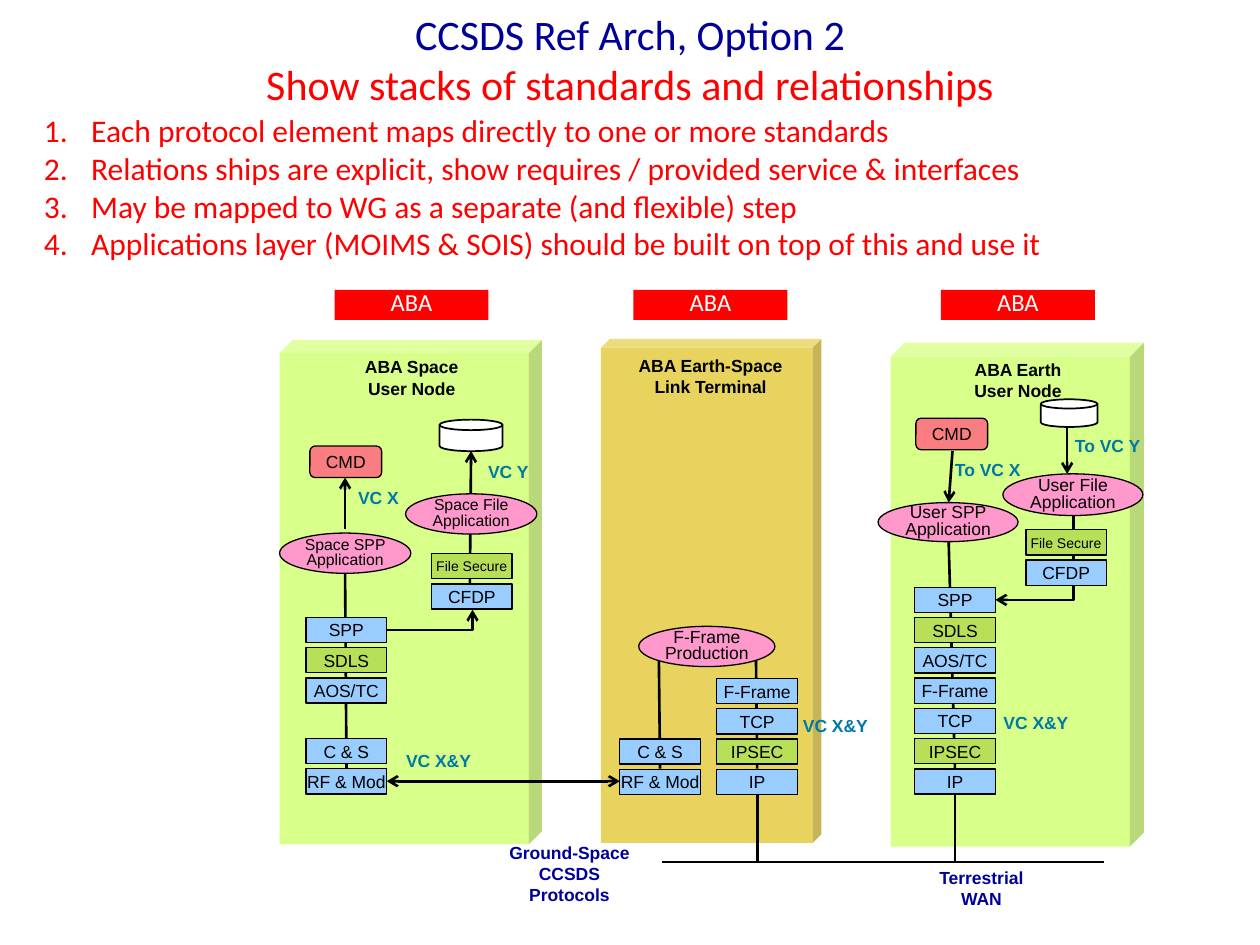
import lxml.etree
import pptx
import pptx.dml.color
import pptx.enum.shapes
import pptx.enum.text
import pptx.oxml.ns
import pptx.util

Pt = pptx.util.Pt
KIND = pptx.enum.shapes.MSO_SHAPE
LINK = pptx.enum.shapes.MSO_CONNECTOR
ALIGN = pptx.enum.text.PP_ALIGN
ANCHOR = pptx.enum.text.MSO_ANCHOR
SIZE = (46, 14.4)
STEP = 17.3
GREEN = ("SDLS", "IPSEC", "File Secure")
TIGHT = {"margin_left": 0, "margin_right": 0, "margin_top": 0, "margin_bottom": 0}
PLAIN = {"name": "Arial", "size": Pt(10)}
BOLD = {**PLAIN, "bold": True}
CENTER = {"alignment": ALIGN.CENTER}
DENSE = {**CENTER, "line_spacing": 0.8}


def tint(code):
    """Turn a hex string into a colour."""
    return pptx.dml.color.RGBColor.from_string(code)


def apply(item, form):
    """Set each attribute in the format on the item."""
    for key, value in form.items():
        setattr(item, key, value)


def add(node, tag, **attrs):
    """Append a drawing element to an XML node."""
    return lxml.etree.SubElement(node, pptx.oxml.ns.qn(tag), attrs)


def write(shape, text, font, color, para=CENTER, frame=TIGHT):
    """Fill a shape with formatted text."""
    body = shape.text_frame
    body.text = text
    apply(body, {"vertical_anchor": ANCHOR.MIDDLE, "word_wrap": True, **frame})
    for line in body.paragraphs:
        apply(line, para)
        for run in line.runs:
            apply(run.font, font)
            run.font.color.rgb = tint(color)
    return body


def place(slide, box, kind, x, y, w, h, fill, edge=0.75):
    """Add a filled shape relative to the box."""
    shape = slide.shapes.add_shape(kind, Pt(box[0] + x), Pt(box[1] + y), Pt(w), Pt(h))
    shape.shadow.inherit = False
    shape.fill.solid()
    shape.fill.fore_color.rgb = tint(fill)
    if edge:
        shape.line.color.rgb = tint("000000")
        shape.line.width = Pt(edge)
    else:
        shape.line.fill.background()
    return shape


def note(slide, box, x, y, w, h, text, font, color, para=CENTER, frame={}):
    """Add a text box relative to the box."""
    shape = slide.shapes.add_textbox(Pt(box[0] + x), Pt(box[1] + y), Pt(w), Pt(h))
    return write(shape, text, font, color, para, frame)


def wire(slide, box, x1, y1, x2, y2, ends=(), bent=False):
    """Join two points, straight or down and then left."""
    if bent:
        mid, half = ((x1 + x2) / 2, (y1 + y2) / 2), ((y2 - y1) / 2, (x1 - x2) / 2)
        x1, y1 = mid[0] - half[0], mid[1] - half[1]
        x2, y2 = mid[0] + half[0], mid[1] + half[1]
    dx, dy = box
    line = slide.shapes.add_connector(
        LINK.STRAIGHT, Pt(dx + x1), Pt(dy + y1), Pt(dx + x2), Pt(dy + y2))
    line.line.color.rgb = tint("000000")
    line.line.width = Pt(1.5)
    props = line._element.spPr
    if bent:
        props.find(pptx.oxml.ns.qn("a:xfrm")).set("rot", "5400000")
        props.find(pptx.oxml.ns.qn("a:prstGeom")).set("prst", "bentConnector2")
    for end in ends:
        add(line.line._get_or_add_ln(), "a:" + end, type="arrow")
    add(props, "a:effectLst")


def stack(slide, box, x, y, names):
    """Pile protocol boxes at an equal step, leaving out empty rows."""
    for row, name in enumerate(names):
        if name:
            fill = "B7E058" if name in GREEN else "99CCFF"
            size = 8 if name == "File Secure" else 10
            shape = place(slide, box, KIND.RECTANGLE, x, y + row * STEP, *SIZE, fill)
            write(shape, name, {**PLAIN, "size": Pt(size)}, "000000")


def oval(slide, box, x, y, w, h, text, size=10):
    """Add an application ellipse."""
    shape = place(slide, box, KIND.OVAL, x, y, w, h, "FF99CC")
    write(shape, text, {**PLAIN, "size": Pt(size)}, "000000", DENSE)


def store(slide, box, x, y, w, h):
    """Add a data store."""
    place(slide, box, KIND.FLOWCHART_MAGNETIC_DISK, x, y, w, h, "FFFFFF", 1)


def order(slide, box, x, y):
    """Add a command box."""
    shape = place(slide, box, KIND.ROUNDED_RECTANGLE, x, y, 41, 18, "FA7D81")
    write(shape, "CMD", PLAIN, "000000")


def label(slide, box, x, y, w, text):
    """Add a virtual channel label."""
    note(slide, box, x, y, w, 19.4, text, BOLD, "0079A4", frame={"word_wrap": False})


def node(slide, box, wide, deep, fill, mid, title):
    """Add a translucent block with its tag and title."""
    cube = place(slide, box, KIND.CUBE, 0, 0, wide, 288, fill, 0)
    cube.adjustments[0] = deep
    color = next(cube._element.iter(pptx.oxml.ns.qn("a:srgbClr")))
    add(color, "a:alpha", val="76000")
    tag = place(slide, box, KIND.RECTANGLE, mid - 44, 165.6 - box[1], 88, 17.3, "FF0000", 0)
    write(tag, "ABA", {"name": "Calibri", "size": Pt(14)}, "FFFFFF", DENSE)
    note(slide, box, mid - 60, 5.5, 120, 31.7, title, BOLD, "000000")


def space(slide, box):
    """Build the space user node."""
    node(slide, box, 149.8, 0.049, "CCFF66", 75.4, "ABA Space\vUser Node")
    wire(slide, box, 37.4, 133, 38.2, 245)
    wire(slide, box, 37.4, 78.5, 37.4, 108, ["headEnd"])
    wire(slide, box, 109.4, 63.4, 108.7, 139.7, ["headEnd"])
    wire(slide, box, 110.2, 154, 61.2, 165.6, ["headEnd"], True)
    stack(slide, box, 15.1, 158.4, ["SPP", "SDLS", "AOS/TC", None, "C & S", "RF & Mod"])
    stack(slide, box, 86.8, 122, ["File Secure", "CFDP"])
    oval(slide, box, 0, 110.2, 75, 23, "Space SPP\nApplication", 9)
    oval(slide, box, 72, 87.8, 75, 23, "Space File\vApplication", 9)
    order(slide, box, 17.3, 60.5)
    store(slide, box, 91.4, 45.4, 36, 18)
    label(slide, box, 111.6, 65.5, 38, "VC Y")
    label(slide, box, 37.4, 80, 38, "VC X")
    label(slide, box, 64.8, 230.4, 52, "VC X&Y")


def relay(slide, box):
    """Build the link terminal."""
    node(slide, box, 126, 0.04, "E0C62C", 62.6, "ABA Earth-Space\nLink Terminal")
    wire(slide, box, 33.1, 183.6, 33.8, 245.5)
    wire(slide, box, 88.6, 183.6, 89.3, 245.5)
    stack(slide, box, 10.8, 194, [None, None, "C & S", "RF & Mod"])
    stack(slide, box, 66.2, 194, ["F-Frame", "TCP", "IPSEC", "IP"])
    oval(slide, box, 21.6, 164.2, 77.8, 23, "F-Frame\nProduction")
    label(slide, box, 108, 211, 52, "VC X&Y")


def earth(slide, box):
    """Build the earth user node."""
    node(slide, box, 144.7, 0.056, "CCFF66", 72.7, "ABA Earth\vUser Node")
    wire(slide, box, 33.1, 113.8, 36.7, 244)
    wire(slide, box, 35.3, 62, 33.1, 91.4, ["tailEnd"])
    wire(slide, box, 100.8, 49, 100.8, 75, ["tailEnd"])
    wire(slide, box, 104.4, 98.6, 59.8, 147, ["tailEnd"], True)
    names = ["SPP", "SDLS", "AOS/TC", "F-Frame", "TCP", "IPSEC", "IP"]
    stack(slide, box, 13.7, 139.8, names)
    stack(slide, box, 77.2, 107, ["File Secure", "CFDP"])
    oval(slide, box, 64.1, 75, 80, 23.8, "User File\vApplication")
    oval(slide, box, -7.2, 91.4, 80, 22.3, "User SPP\nApplication")
    order(slide, box, 14.4, 43.2)
    store(slide, box, 85.7, 32.4, 32.4, 15.8)
    label(slide, box, 28.8, 62.6, 53.3, "To VC X")
    label(slide, box, 54, 207.4, 58, "VC X&Y")
    label(slide, box, 95.8, 49, 56.2, "To VC Y")


def net(slide, box):
    """Join the nodes and name the networks."""
    wire(slide, box, 99.4, 46.1, 352.1, 46.1)
    for x in (154.1, 267.2):
        wire(slide, box, x, 7.6, x, 46.1)
    wire(slide, box, -57.6, 0, 75.6, 0, ["headEnd", "tailEnd"])
    top = {"vertical_anchor": ANCHOR.TOP}
    note(slide, box, 0, 31, 93.6, 44, "Ground-Space\nCCSDS Protocols", BOLD, "000099", frame=top)
    note(slide, box, 241.2, 45.4, 82, 31.7, "Terrestrial\nWAN", BOLD, "000099", frame=top)


def head(slide, box):
    """Write the title and the numbered points."""
    font = {"name": "Calibri", "size": Pt(24)}
    body = note(slide, box, 18, 0, 648, 72.7, "CCSDS Ref Arch, Option 2\vShow stacks of standards and relationships", font, "000099")
    body.paragraphs[0].runs[1].font.color.rgb = tint("FF0000")
    points = "\n".join([
        "Each protocol element maps directly to one or more standards",
        "Relations ships are explicit, show requires / provided service & interfaces",
        "May be mapped to WG as a separate (and flexible) step",
        "Applications layer (MOIMS & SOIS) should be built on top of this and use it",
    ])
    font["size"] = Pt(18)
    body = note(slide, box, 0, 67, 644.4, 85, points, font, "FF0000", {"alignment": ALIGN.LEFT})
    for line in body.paragraphs:
        props = line._p.get_or_add_pPr()
        props.set("marL", str(Pt(27)))
        props.set("indent", str(-Pt(27)))
        add(props, "a:buFont", typeface="+mj-lt")
        add(props, "a:buAutoNum", type="arabicPeriod")


def main():
    """Build and save the slide."""
    deck = pptx.Presentation()
    apply(deck, {"slide_width": Pt(720), "slide_height": Pt(540)})
    slide = deck.slides.add_slide(deck.slide_layouts[6])
    earth(slide, (509, 195.8))
    relay(slide, (343.4, 193.7))
    space(slide, (159.8, 194.4))
    net(slide, (278.6, 446.4))
    head(slide, (18, -2.9))
    deck.save("out.pptx")


if __name__ == "__main__":
    main()
